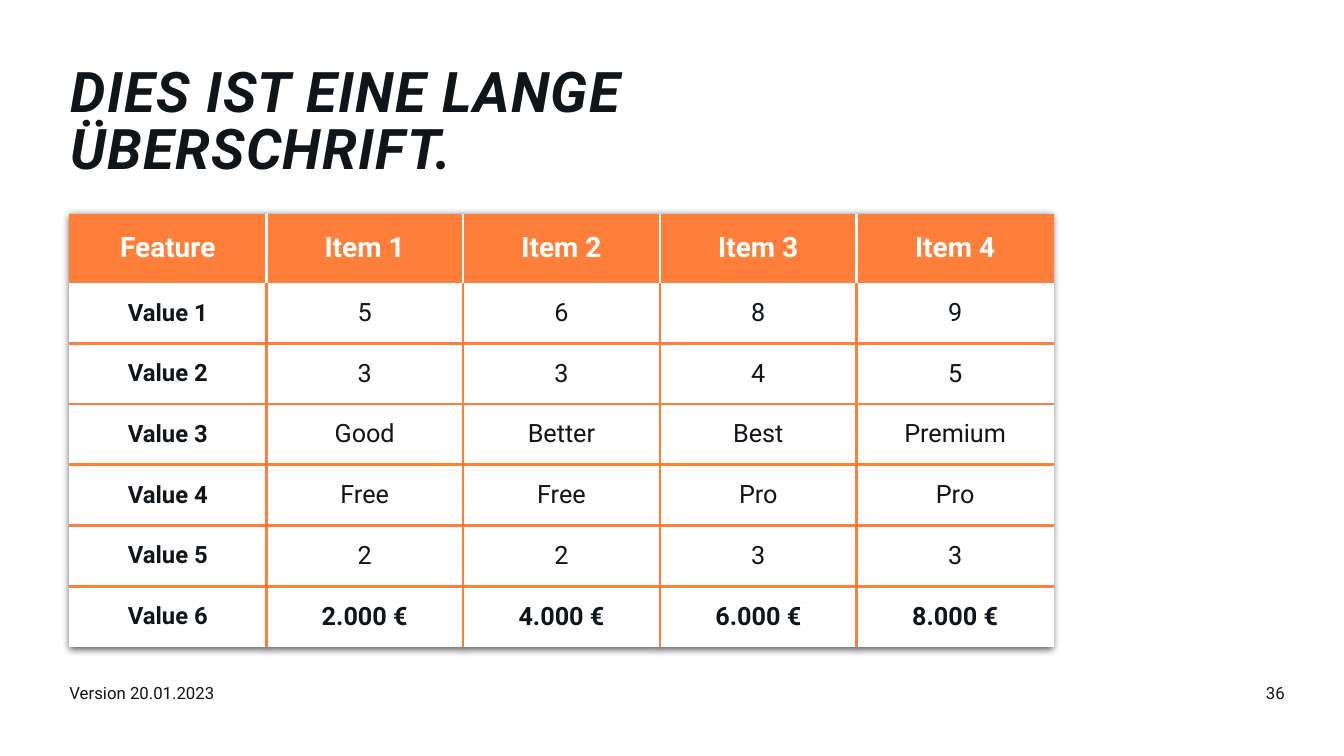
from dataclasses import dataclass

from lxml.etree import SubElement
from pptx import Presentation
from pptx.dml.color import RGBColor as Rgb
from pptx.enum.text import MSO_ANCHOR as Anchor, PP_ALIGN as Align
from pptx.oxml import parse_xml
from pptx.oxml.ns import qn
from pptx.util import Cm, Pt

# Content
TITLE = "DIES IST EINE LANGE ÜBERSCHRIFT."
VERSION = "Version 20.01.2023"
PAGE = "36"
ROWS = [
    ("Feature", "Item 1", "Item 2", "Item 3", "Item 4"),
    ("Value 1", "5", "6", "8", "9"),
    ("Value 2", "3", "3", "4", "5"),
    ("Value 3", "Good", "Better", "Best", "Premium"),
    ("Value 4", "Free", "Free", "Pro", "Pro"),
    ("Value 5", "2", "2", "3", "3"),
    ("Value 6", "2.000 €", "4.000 €", "6.000 €", "8.000 €"),
]


@dataclass(frozen=True)
class Theme:
    font: str = "Roboto"
    ink: str = "10151A"
    white: str = "FFFFFF"
    accent: str = "FF7E39"
    title: int = 40
    head: int = 20
    body: int = 18
    label: int = 17
    small: int = 12
    rule: float = 2.25


theme = Theme()

# Layout in centimetres
LEFT, TOP = 1.75, 5.38
COL, HEAD, ROW = 4.96, 1.74, 1.53
FOOT = 17.2
PLAIN = "{2D5ABB26-0587-4C30-8999-92F81FD0307C}"
SHADOW = (
    '<a:effectLst xmlns:a="http://schemas.openxmlformats.org/drawingml/2006/main">'
    '<a:outerShdw blurRad="63500" dist="25400" dir="5400000" algn="t" rotWithShape="0">'
    '<a:srgbClr val="10151A"><a:alpha val="70000"/></a:srgbClr>'
    "</a:outerShdw></a:effectLst>"
)


def write(frame, text, size=theme.small, color=theme.ink, bold=False,
          italic=False, align=Align.LEFT, lead=None, track=None):
    para = frame.paragraphs[0]
    para.alignment = align
    if lead:
        para.line_spacing = lead
    run = para.add_run()
    run.text = text
    font = run.font
    font.name, font.size = theme.font, Pt(size)
    font.bold, font.italic = bold, italic
    font.color.rgb = Rgb.from_string(color)
    if track:
        run._r.get_or_add_rPr().set("spc", str(track * 100))


def add_box(slide, x, y, w, h, text, **style):
    frame = slide.shapes.add_textbox(Cm(x), Cm(y), Cm(w), Cm(h)).text_frame
    frame.word_wrap = True
    frame.margin_left = frame.margin_right = 0
    frame.margin_top = frame.margin_bottom = 0
    write(frame, text, **style)


def set_edges(cell, edges):
    # Border elements must come before the fill, in the order L, R, T, B
    props = cell._tc.get_or_add_tcPr()
    for spot, (side, color) in enumerate(edges.items()):
        line = SubElement(props, qn("a:ln" + side))
        props.insert(spot, line)
        if color:
            line.set("w", str(Pt(theme.rule)))
            fill = SubElement(line, qn("a:solidFill"))
            SubElement(fill, qn("a:srgbClr")).set("val", color)
        else:
            line.set("w", "0")
            SubElement(line, qn("a:noFill"))


def add_grid(slide):
    rows, cols = len(ROWS), len(ROWS[0])
    high = HEAD + ROW * (rows - 1)
    table = slide.shapes.add_table(
        rows, cols, Cm(LEFT), Cm(TOP), Cm(COL * cols), Cm(high)).table
    table.horz_banding = False
    props = table._tbl.tblPr
    props.find(qn("a:tableStyleId")).text = PLAIN
    props.insert(0, parse_xml(SHADOW))

    for col in table.columns:
        col.width = Cm(COL)
    for r, texts in enumerate(ROWS):
        table.rows[r].height = Cm(ROW if r else HEAD)
        rule = theme.accent if r else theme.white
        for c, text in enumerate(texts):
            cell = table.cell(r, c)
            cell.vertical_anchor = Anchor.MIDDLE
            cell.margin_left = cell.margin_right = Cm(0.5)
            cell.margin_top = cell.margin_bottom = 0
            cell.fill.solid()
            cell.fill.fore_color.rgb = Rgb.from_string(
                theme.white if r else theme.accent)
            size = theme.head if r == 0 else theme.body if c else theme.label
            write(cell.text_frame, text, size=size, align=Align.CENTER,
                  color=theme.ink if r else theme.white,
                  bold=r in (0, rows - 1) or c == 0)
            # Only inner edges are ruled, and none below the header
            set_edges(cell, {
                "L": rule if c else None,
                "R": rule if c < cols - 1 else None,
                "T": rule if r > 1 else None,
                "B": rule if 0 < r < rows - 1 else None,
            })


def main():
    deck = Presentation()
    deck.slide_width, deck.slide_height = Cm(33.87), Cm(19.05)
    slide = deck.slides.add_slide(deck.slide_layouts[6])

    # Footer
    add_box(slide, 26.92, FOOT, 5.46, 1.02, PAGE, align=Align.RIGHT)
    add_box(slide, LEFT, FOOT, 20.9, 1.02, VERSION)

    # Title
    add_box(slide, 1.78, 1.68, 20.83, 2.84, TITLE, size=theme.title,
            bold=True, italic=True, lead=0.85, track=1)

    # Comparison table
    add_grid(slide)
    deck.save("out.pptx")


if __name__ == "__main__":
    main()
